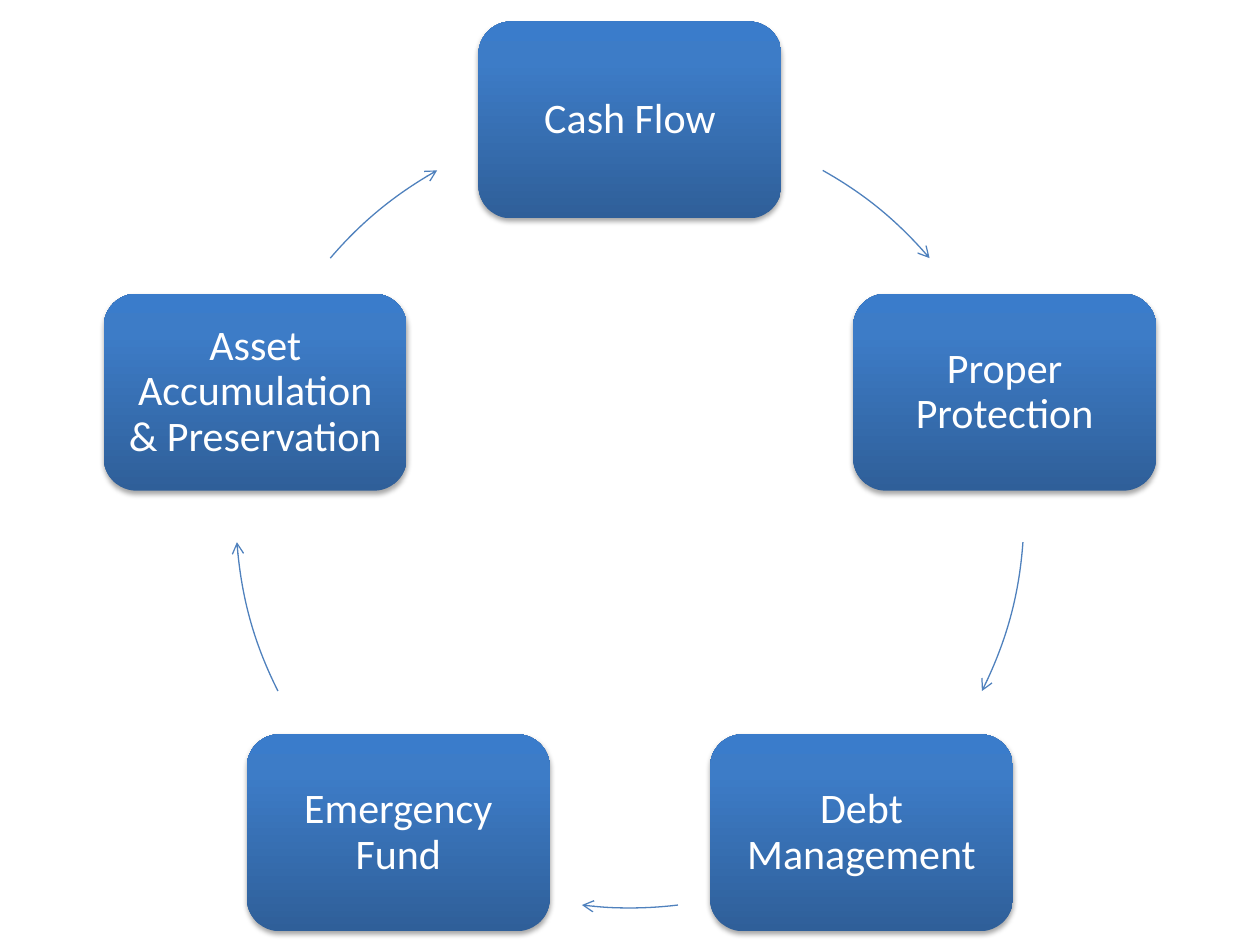
from dataclasses import dataclass
from math import cos, radians, sin

from pptx import Presentation
from pptx.dml.color import RGBColor as RGB
from pptx.enum.shapes import MSO_SHAPE as SHAPE
from pptx.enum.text import MSO_ANCHOR as ANCHOR, PP_ALIGN as ALIGN
from pptx.oxml import parse_xml
from pptx.oxml.ns import nsdecls, qn
from pptx.util import Pt

EMU_PER_PX = 914400 // 126


def px(n):
    return round(n * EMU_PER_PX)


@dataclass(frozen=True)
class Theme:
    font: str = "Calibri"
    size: int = 24
    text: str = "FFFFFF"
    arrow: str = "4F81BD"
    arrow_width: float = 0.75
    box_stops: tuple = ((0, "2F5F99"), (80, "3D7CC7"), (100, "3A7CCB"))
    shadow: str = "000000"


def write(tf, text, *, font, size, color, inset=12):
    tf.word_wrap = True
    tf.vertical_anchor = ANCHOR.MIDDLE
    tf.margin_left = tf.margin_right = px(inset)
    tf.margin_top = tf.margin_bottom = px(inset)
    p = tf.paragraphs[0]
    p.alignment = ALIGN.CENTER
    p.line_spacing = 0.9
    r = p.add_run()
    r.text = text
    r.font.name = font
    r.font.size = Pt(size)
    r.font.color.rgb = RGB.from_string(color)


class Painter:
    def __init__(self, slide, theme):
        self.slide = slide
        self.theme = theme

    def shape(self, kind, cx, cy, w, h):
        sp = self.slide.shapes.add_shape(
            kind, px(cx - w / 2), px(cy - h / 2), px(w), px(h))
        sp.shadow.inherit = False
        return sp

    def box(self, text, cx, cy, w, h):
        t = self.theme
        sp = self.shape(SHAPE.ROUNDED_RECTANGLE, cx, cy, w, h)
        sp.line.fill.background()
        sp.fill.gradient()
        sp.fill.gradient_angle = 90
        stops = "".join(
            f'<a:gs pos="{pos * 1000}"><a:srgbClr val="{color}"/></a:gs>'
            for pos, color in t.box_stops)
        grad = sp.element.spPr.find(qn("a:gradFill"))
        grad.replace(grad.find(qn("a:gsLst")), parse_xml(
            f'<a:gsLst {nsdecls("a")}>{stops}</a:gsLst>'))
        sp.element.spPr.find(qn("a:effectLst")).append(parse_xml(
            f'<a:outerShdw {nsdecls("a")} blurRad="{Pt(3.1)}" dist="{Pt(1.8)}" '
            f'dir="5400000" rotWithShape="0"><a:srgbClr val="{t.shadow}">'
            '<a:alpha val="35000"/></a:srgbClr></a:outerShdw>'))
        write(sp.text_frame, text, font=t.font, size=t.size, color=t.text)

    def arc_arrow(self, cx, cy, radius, start, end):
        sp = self.shape(SHAPE.ARC, cx, cy, 2 * radius, 2 * radius)
        for i, angle in enumerate((start, end)):
            sp.adjustments[i] = (angle - 90) % 360 * 0.6
        sp.fill.background()
        sp.line.color.rgb = RGB.from_string(self.theme.arrow)
        sp.line.width = Pt(self.theme.arrow_width)
        sp.element.spPr.find(qn("a:ln")).append(parse_xml(
            f'<a:tailEnd {nsdecls("a")} type="arrow"/>'))


def main():
    prs = Presentation()
    prs.slide_width, prs.slide_height = px(1260), px(945)
    s = prs.slides.add_slide(prs.slide_layouts[6])
    painter = Painter(s, Theme())

    cx, cy, radius = 630, 514, 394
    box_w, box_h = 303, 197
    steps = (
        ("Cash Flow", 29.3, 49.5),
        ("Proper Protection", 94.1, 116.7),
        ("Debt Management", 173, 187),
        ("Emergency Fund", 243.3, 265.9),
        ("Asset Accumulation & Preservation", 310.5, 330.7),
    )
    for i, (text, start, end) in enumerate(steps):
        angle = radians(i * 360 / len(steps))
        painter.box(text, cx + radius * sin(angle), cy - radius * cos(angle),
                    box_w, box_h)
        painter.arc_arrow(cx, cy, radius, start, end)

    prs.save("out.pptx")


if __name__ == "__main__":
    main()
